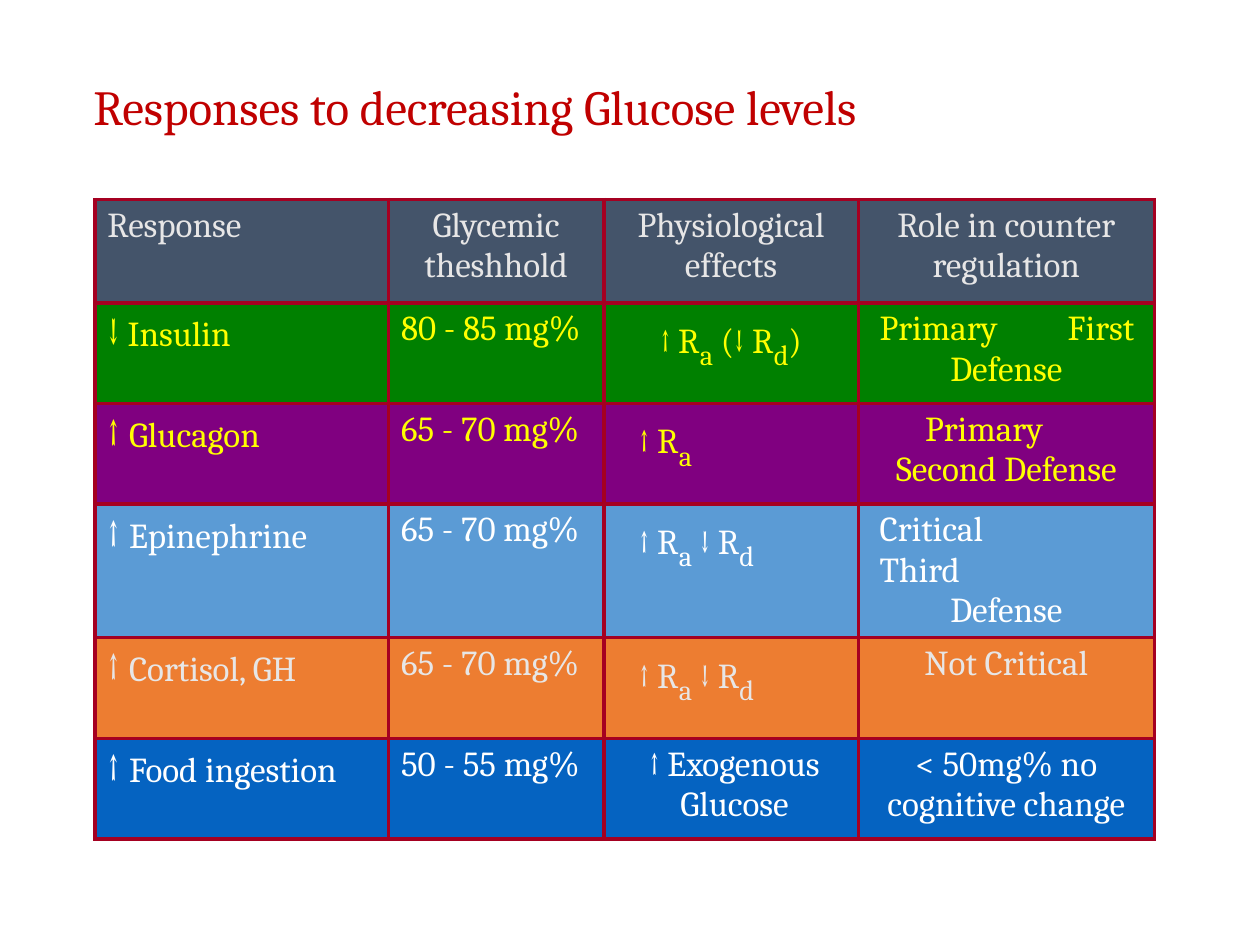
import dataclasses
from typing import NamedTuple

import lxml.etree
import pptx
import pptx.dml.color
import pptx.enum.text
import pptx.oxml.ns
import pptx.util

Pt = pptx.util.Pt
qn = pptx.oxml.ns.qn
LEFT = pptx.enum.text.PP_ALIGN.LEFT
CENTER = pptx.enum.text.PP_ALIGN.CENTER


@dataclasses.dataclass(frozen=True)
class Theme:
    font: str = "Cambria"
    title: str = "C00000"
    border: str = "A50021"
    header: str = "44546A"
    pale: str = "E7E6E6"
    yellow: str = "FFFF00"
    white: str = "FFFFFF"
    title_size: float = 28
    body_size: float = 20
    arrow_size: float = 24
    sub_size: float = 28
    border_width: float = 2.25


THEME = Theme()


class Run(NamedTuple):
    text: str
    size: float = THEME.body_size
    sub: bool = False


class Para(NamedTuple):
    runs: list[Run]
    align: int = LEFT
    indent: float = 0
    tab: float = 0


class Row(NamedTuple):
    fill: str
    color: str
    cells: list[list[Para]]


def rgb(value: str):
    return pptx.dml.color.RGBColor.from_string(value)


def text(words: str, **fmt) -> list[Para]:
    return [Para([Run(words)], **fmt)]


def hormone(arrow: str, name: str) -> list[Para]:
    return [Para([Run(arrow, THEME.arrow_size), Run(name)])]


def rates(*parts: str, **fmt) -> list[Para]:
    """Alternate body text and subscripts; en spaces set the wide gaps."""
    runs = [Run(part, THEME.sub_size, True) if i % 2 else Run(part)
            for i, part in enumerate(parts)]
    return [Para(runs, **fmt)]


def defense(rank: str, order: str) -> list[Para]:
    """Rank and order apart on one line, with the last word centred below."""
    return (text(f"{rank}\t{order}", indent=5, tab=107.5)
            + text("Defense", align=CENTER))


def add_run(p, words: str, *, size: float, color: str, sub: bool = False):
    r = p.add_run()
    r.text = words
    r.font.name = THEME.font
    r.font.size = Pt(size)
    r.font.color.rgb = rgb(color)
    if sub:
        r._r.get_or_add_rPr().set("baseline", "-25000")


def add_borders(cell):
    tc_pr = cell._tc.get_or_add_tcPr()
    for side in ("a:lnL", "a:lnR", "a:lnT", "a:lnB"):
        ln = lxml.etree.SubElement(tc_pr, qn(side), w=str(Pt(THEME.border_width)))
        fill = lxml.etree.SubElement(ln, qn("a:solidFill"))
        lxml.etree.SubElement(fill, qn("a:srgbClr"), val=THEME.border)


def fill_cell(cell, paras: list[Para], fill: str, color: str):
    add_borders(cell)
    cell.fill.solid()
    cell.fill.fore_color.rgb = rgb(fill)
    tf = cell.text_frame
    for i, para in enumerate(paras):
        p = tf.add_paragraph() if i else tf.paragraphs[0]
        p.alignment = para.align
        p_pr = p._p.get_or_add_pPr()
        if para.indent:
            p_pr.set("marL", str(Pt(para.indent)))
        if para.tab:
            tabs = lxml.etree.SubElement(p_pr, qn("a:tabLst"))
            lxml.etree.SubElement(tabs, qn("a:tab"), pos=str(Pt(para.tab)), algn="l")
        for run in para.runs:
            add_run(p, run.text, size=run.size, color=color, sub=run.sub)


def add_title(s, words: str):
    sp = s.shapes.title
    sp.left, sp.top, sp.width, sp.height = Pt(53.3), Pt(18), Pt(612.7), Pt(59.8)
    tf = sp.text_frame
    tf.margin_left = tf.margin_right = tf.margin_top = tf.margin_bottom = 0
    tf.vertical_anchor = pptx.enum.text.MSO_ANCHOR.BOTTOM
    tf.word_wrap = True
    p = tf.paragraphs[0]
    p.alignment = LEFT
    p.line_spacing = 0.9
    add_run(p, words, size=THEME.title_size, color=THEME.title)


def add_response_table(s, rows: list[Row]):
    widths = [167.8, 123.1, 145.4, 169.2]
    heights = [59] + [57.5] * (len(rows) - 1)
    table = s.shapes.add_table(len(rows), len(widths), Pt(54.2), Pt(114.1),
                               Pt(sum(widths)), Pt(sum(heights))).table
    table.first_row = table.horz_banding = False
    for column, width in zip(table.columns, widths):
        column.width = Pt(width)
    for i, row in enumerate(rows):
        table.rows[i].height = Pt(heights[i])
        for j, paras in enumerate(row.cells):
            fill_cell(table.cell(i, j), paras, row.fill, row.color)


ROWS = [
    Row(THEME.header, THEME.pale, [
        text("Response"),
        text("Glycemic theshhold", align=CENTER),
        text("Physiological effects", align=CENTER),
        text("Role in counter regulation", align=CENTER)]),
    Row("008000", THEME.yellow, [
        hormone("↓", " Insulin"), text("80 - 85 mg%"),
        rates("↑ R", "a", " (↓ R", "d", ")", align=CENTER),
        defense("Primary", "First")]),
    Row("800080", THEME.yellow, [
        hormone("↑ ", "Glucagon"), text("65 - 70 mg%"),
        rates("↑ R", "a", indent=13),
        text("Primary", indent=31) + text("Second Defense", align=CENTER)]),
    Row("5B9BD5", THEME.white, [
        hormone("↑ ", "Epinephrine"), text("65 - 70 mg%"),
        rates("↑ R", "a", " ↓ R", "d", indent=13),
        defense("Critical", "Third")]),
    Row("ED7D31", THEME.pale, [
        hormone("↑ ", "Cortisol, GH"), text("65 - 70 mg%"),
        rates("↑ R", "a", " ↓ R", "d", indent=13),
        text("Not Critical", align=CENTER)]),
    Row("0563C1", THEME.white, [
        hormone("↑ ", "Food ingestion"), text("50 - 55 mg%"),
        text("↑ Exogenous Glucose", align=CENTER, indent=4),
        text("< 50mg% no cognitive change", align=CENTER)]),
]


def main():
    prs = pptx.Presentation()
    prs.slide_width, prs.slide_height = Pt(720), Pt(540)
    s = prs.slides.add_slide(prs.slide_layouts[5])
    add_title(s, "Responses to decreasing Glucose levels")
    add_response_table(s, ROWS)
    prs.save("out.pptx")


if __name__ == "__main__":
    main()
